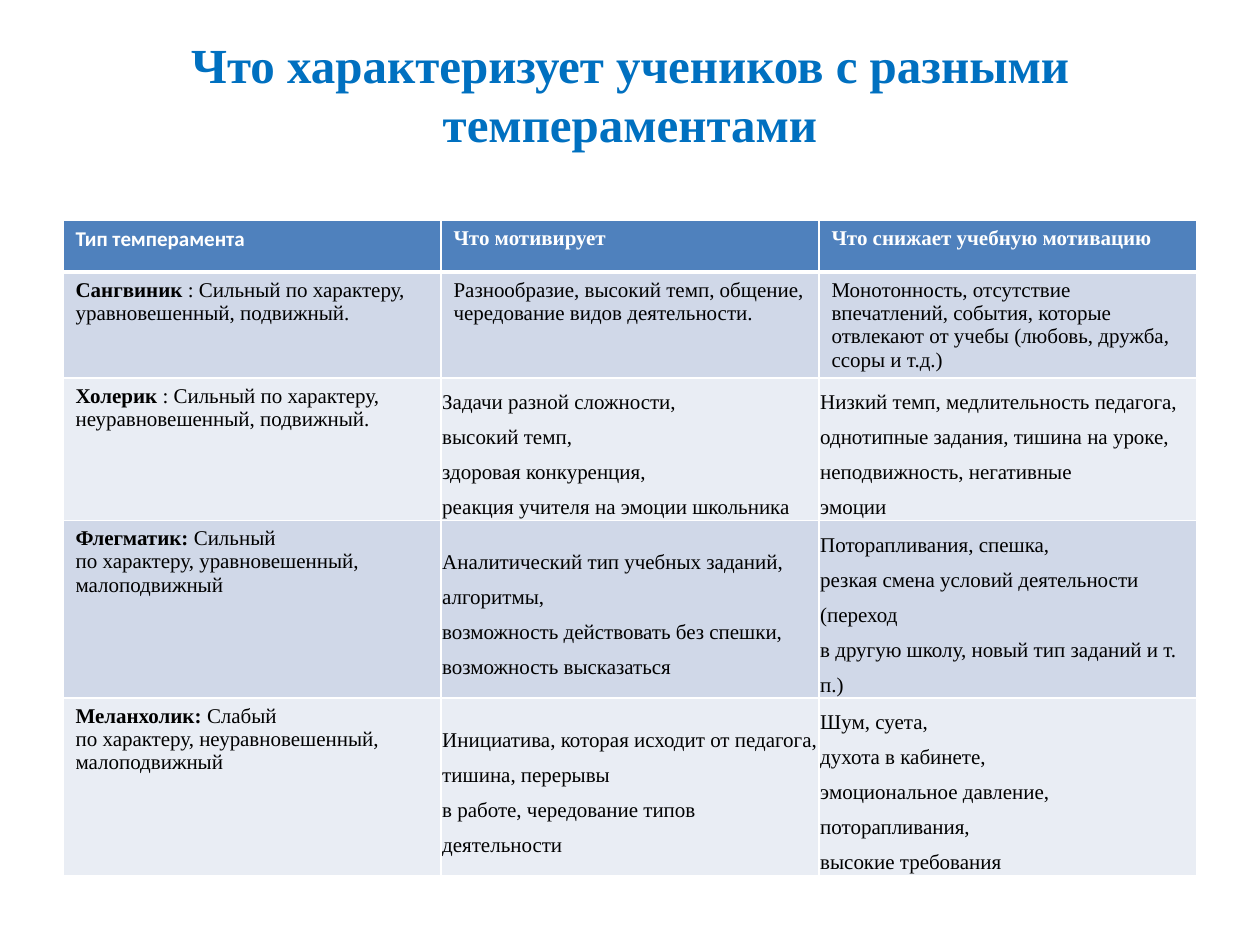
"""Build a slide with a table of pupils' temperaments and their motivation."""
from lxml import etree
from pptx import Presentation
from pptx.dml.color import RGBColor
from pptx.enum.text import MSO_ANCHOR, MSO_AUTO_SIZE, PP_ALIGN
from pptx.oxml.ns import qn
from pptx.util import Inches, Pt

MIDDLE, TOP = MSO_ANCHOR.MIDDLE, MSO_ANCHOR.TOP
CENTER, FIXED = PP_ALIGN.CENTER, MSO_AUTO_SIZE.NONE
SERIF, SANS = "Times New Roman", "Calibri"
COLORS = {"title": "0070C0", "head": "4F81BD", "odd": "D0D8E8",
          "even": "E9EDF4", "white": "FFFFFF", "black": "000000"}
HEIGHTS = [0.41, 0.84, 1.13, 1.41, 1.41]
ROWS = [
    [["Тип темперамента|"], ["Что мотивирует|"], ["Что снижает учебную мотивацию|"]],
    [["Сангвиник |: Сильный по характеру, уравновешенный, подвижный."],
     ["Разнообразие, высокий темп, общение, чередование видов деятельности."],
     ["Монотонность, отсутствие впечатлений, события, которые отвлекают "
      "от учебы (любовь, дружба, ссоры и т.д.)"]],
    [["Холерик |: Сильный по характеру, неуравновешенный, подвижный."],
     ["Задачи разной сложности,", "высокий темп,", "здоровая конкуренция,",
      "реакция учителя на эмоции школьника"],
     ["Низкий темп, медлительность педагога, однотипные задания, "
      "тишина на уроке, неподвижность, негативные", "эмоции"]],
    [["Флегматик: |Сильный \nпо характеру, уравновешенный, малоподвижный"],
     ["Аналитический тип учебных заданий, алгоритмы,",
      "возможность действовать без спешки, возможность высказаться"],
     ["Поторапливания, спешка,",
      "резкая смена условий деятельности (переход \n"
      "в другую школу, новый тип заданий и т. п.)"]],
    [["Меланхолик: |Слабый \nпо характеру, неуравновешенный,", "малоподвижный"],
     ["Инициатива, которая исходит от педагога,",
      "тишина, перерывы \nв работе, чередование типов деятельности"],
     ["Шум, суета,", "духота в кабинете,", "эмоциональное давление,",
      "поторапливания,", "высокие требования"]],
]


def write(para, text, color, **form):
    for i, line in enumerate(text.split("\n")):
        if i:
            para.add_line_break()
        if line:
            run = para.add_run()
            run.text = line
            run.font.color.rgb = RGBColor.from_string(COLORS[color])
            for key, value in form.items():
                setattr(run.font, key, value)


def edge(cell, side, width):
    props = cell._tc.get_or_add_tcPr()
    line = etree.SubElement(props, qn(f"a:ln{side}"), w=str(Pt(width)))
    fill = etree.SubElement(line, qn("a:solidFill"))
    etree.SubElement(fill, qn("a:srgbClr"), val=COLORS["white"])


deck = Presentation()
deck.slide_width, deck.slide_height = Inches(10), Inches(7.5)
wide, high = deck.slide_width, deck.slide_height
slide = deck.slides.add_slide(deck.slide_layouts[5])

title = slide.shapes.title
place = {"left": int(wide * 0.05), "top": int(high * 0.04),
         "width": int(wide * 0.9), "height": Inches(1.25)}
for key, value in place.items():
    setattr(title, key, value)
frame = title.text_frame
layout = {"word_wrap": True, "auto_size": FIXED, "vertical_anchor": MIDDLE,
          "margin_bottom": Inches(0.42)}
for key, value in layout.items():
    setattr(frame, key, value)
frame.paragraphs[0].alignment = CENTER
write(frame.paragraphs[0], "Что характеризует учеников с разными темпераментами",
      "title", name=SERIF, size=Pt(28), bold=True)

table = slide.shapes.add_table(
    len(ROWS), 3, int(wide * 0.05), Inches(1.75), int(wide * 0.9),
    Inches(sum(HEIGHTS))).table
for r, row in enumerate(ROWS):
    table.rows[r].height = Inches(HEIGHTS[r])
    for c, lines in enumerate(row):
        cell = table.cell(r, c)
        loose = r > 1 and c > 0
        pad = (0.01, 0.01) if loose else (0.1, 0.05)
        form = {"margin_left": Inches(pad[0]), "margin_right": Inches(pad[0]),
                "margin_top": Inches(pad[1]), "margin_bottom": Inches(pad[1]),
                "vertical_anchor": MIDDLE if loose else TOP}
        for key, value in form.items():
            setattr(cell, key, value)
        for side in "LRTB":
            thick = (r, side) in ((0, "B"), (1, "T"))
            edge(cell, side, 3 if thick else 1)
        cell.fill.solid()
        shade = "head" if r == 0 else "odd" if r % 2 else "even"
        cell.fill.fore_color.rgb = RGBColor.from_string(COLORS[shade])
        font = SANS if r == c == 0 else SERIF
        ink = "black" if r else "white"
        for i, line in enumerate(lines):
            body = cell.text_frame
            para = body.add_paragraph() if i else body.paragraphs[0]
            if loose:
                para.line_spacing = 1.5
            lead, _, rest = line.rpartition("|")
            for text, bold in ((lead, True), (rest, False)):
                write(para, text, ink, name=font, size=Pt(12), bold=bold)

deck.save("out.pptx")
